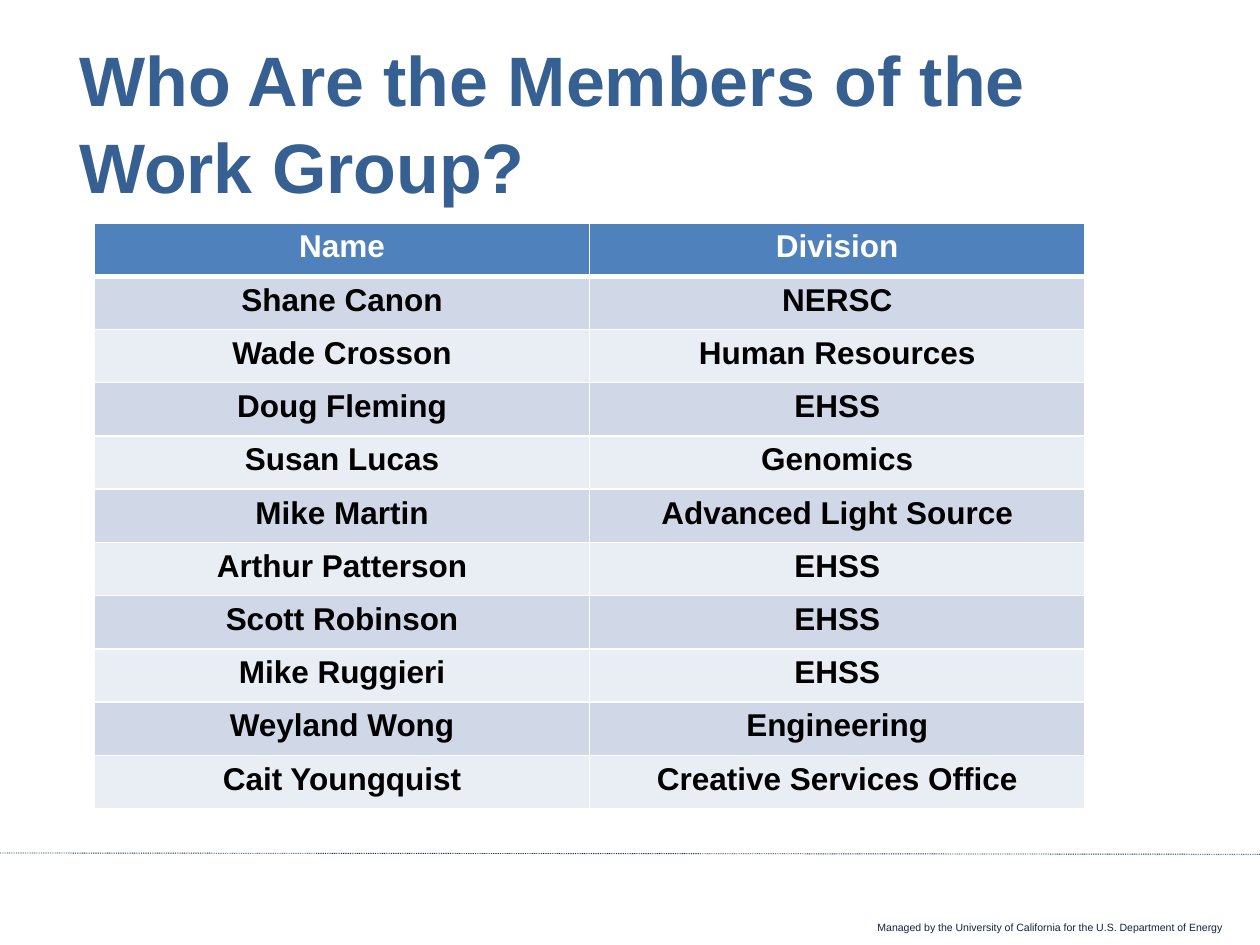
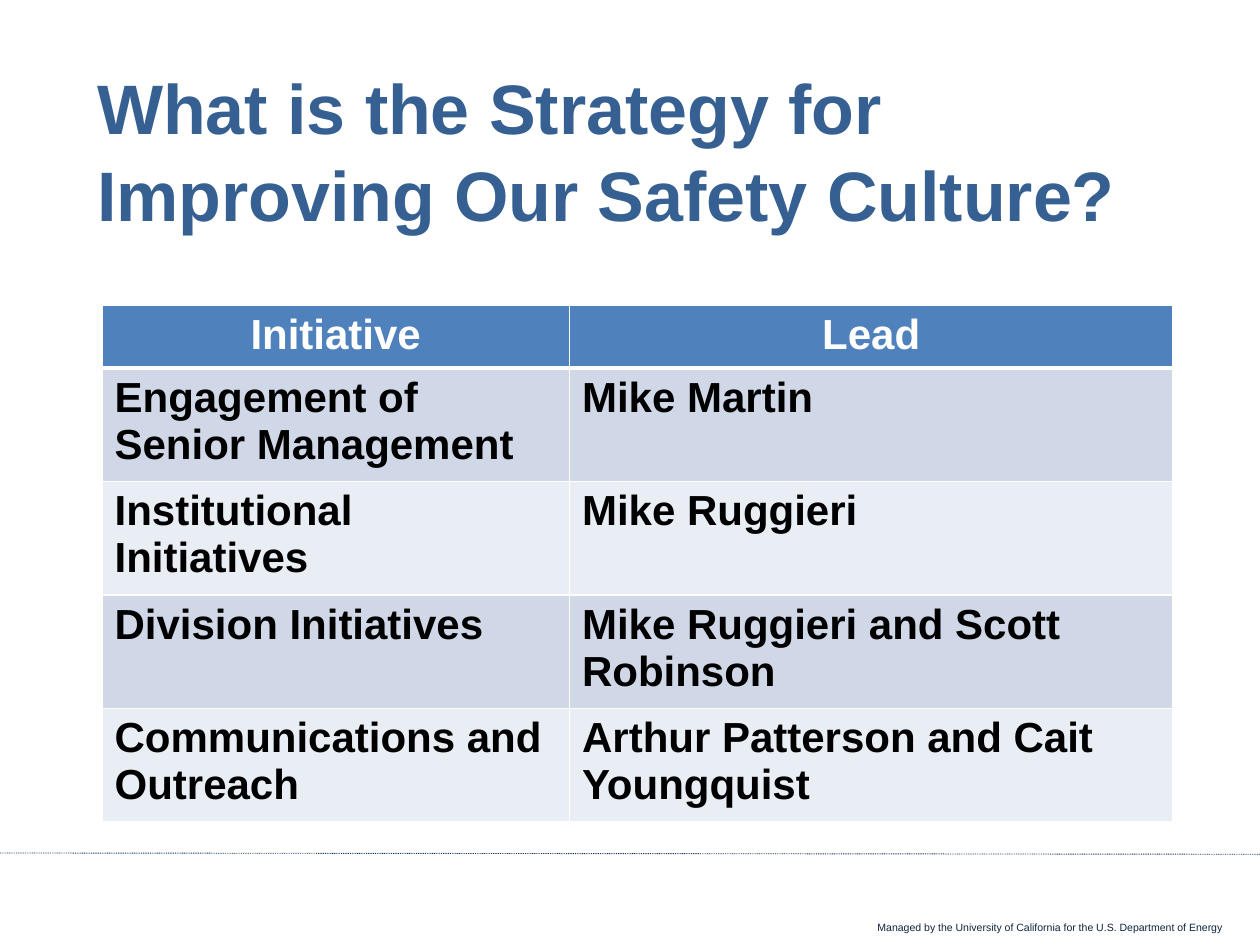
from lxml.etree import SubElement
from pptx import Presentation
from pptx.dml.color import RGBColor
from pptx.enum.dml import MSO_LINE
from pptx.enum.shapes import MSO_CONNECTOR
from pptx.enum.text import MSO_ANCHOR, MSO_AUTO_SIZE, PP_ALIGN
from pptx.oxml import parse_xml
from pptx.oxml.ns import nsdecls, qn
from pptx.util import Inches, Pt

COLORS = {
    "title": "376092",
    "rule": "17375E",
    "footer": "10253F",
    "header": "4F81BD",
    "odd_row": "D0D8E8",
    "even_row": "E9EDF4",
    "white": "FFFFFF",
    "black": "000000",
}
FONT = "Arial"
FOOTER = "Managed by the University of California for the U.S. Department of Energy"
MEMBERS = [
    ("Name", "Division"),
    ("Shane Canon", "NERSC"),
    ("Wade Crosson", "Human Resources"),
    ("Doug Fleming", "EHSS"),
    ("Susan Lucas", "Genomics"),
    ("Mike Martin", "Advanced Light Source"),
    ("Arthur Patterson", "EHSS"),
    ("Scott Robinson", "EHSS"),
    ("Mike Ruggieri", "EHSS"),
    ("Weyland Wong", "Engineering"),
    ("Cait Youngquist", "Creative Services Office"),
]
INITIATIVES = [
    ("Initiative", "Lead"),
    ("Engagement of Senior Management", "Mike Martin"),
    ("Institutional Initiatives", "Mike Ruggieri"),
    ("Division Initiatives", "Mike Ruggieri and Scott Robinson"),
    ("Communications and Outreach", "Arthur Patterson and Cait Youngquist"),
]


def rgb(name):
    """Return the named colour."""
    return RGBColor.from_string(COLORS[name])


def write(paragraph, text, size, color, bold=False, align=PP_ALIGN.LEFT):
    """Add one formatted run to a paragraph."""
    paragraph.alignment = align
    run = paragraph.add_run()
    run.text = text
    font = run.font
    font.name, font.size, font.bold = FONT, Pt(size), bold
    font.color.rgb = rgb(color)


def add_footer(slide):
    """Draw the dotted rule and the footer line."""
    rule = slide.shapes.add_connector(
        MSO_CONNECTOR.STRAIGHT, 0, Inches(6.77), Inches(10), Inches(6.78))
    rule.line.color.rgb = rgb("rule")
    rule.line.width = Pt(0.5)
    rule.line.dash_style = MSO_LINE.ROUND_DOT
    SubElement(rule._element.spPr, qn("a:effectLst"))
    credit = slide.shapes.add_textbox(
        Inches(5.64), Inches(7.26), Inches(4.16), Inches(0.2)).text_frame
    credit.word_wrap = True
    write(credit.paragraphs[0], FOOTER, 6, "footer", align=PP_ALIGN.RIGHT)


def add_title(slide, text, left, top):
    """Place and fill the title placeholder."""
    title = slide.shapes.title
    title.left, title.top = Inches(left), Inches(top)
    title.width, title.height = Inches(8.5), Inches(1.61)
    frame = title.text_frame
    frame.word_wrap = True
    frame.auto_size = MSO_AUTO_SIZE.NONE
    frame.vertical_anchor = MSO_ANCHOR.MIDDLE
    frame.paragraphs[0].line_spacing = 1.04
    write(frame.paragraphs[0], text, 40, "title", bold=True)


def set_borders(cell, top, bottom):
    """Give a cell white borders, with its own top and bottom widths."""
    properties = cell._tc.get_or_add_tcPr()
    widths = {"lnL": 1, "lnR": 1, "lnT": top, "lnB": bottom}
    for position, (side, width) in enumerate(widths.items()):
        properties.insert(position, parse_xml(
            f'<a:{side} {nsdecls("a")} w="{Pt(width)}"><a:solidFill>'
            f'<a:srgbClr val="{COLORS["white"]}"/></a:solidFill></a:{side}>'))


def add_banded_table(slide, rows, left, top, widths, heights, size, body_align):
    """Build a table with a coloured header and alternating rows."""
    table = slide.shapes.add_table(
        len(rows), len(widths), Inches(left), Inches(top),
        Inches(sum(widths)), Inches(sum(heights))).table
    for column, width in zip(table.columns, widths):
        column.width = Inches(width)
    for index, (row, height, texts) in enumerate(zip(table.rows, heights, rows)):
        row.height = Inches(height)
        is_header = index == 0
        band = "header" if is_header else "odd_row" if index % 2 else "even_row"
        for cell, text in zip(row.cells, texts):
            cell.fill.solid()
            cell.fill.fore_color.rgb = rgb(band)
            set_borders(cell, 3 if index == 1 else 1, 3 if is_header else 1)
            write(cell.text_frame.paragraphs[0], text, size,
                  "white" if is_header else "black", bold=True,
                  align=PP_ALIGN.CENTER if is_header else body_align)


def add_table_slide(deck, title, title_at, **table):
    """Add a slide with a title, a table and the shared footer."""
    slide = deck.slides.add_slide(deck.slide_layouts[5])
    add_footer(slide)
    add_title(slide, title, *title_at)
    add_banded_table(slide, **table)


def main():
    """Build and save the deck."""
    deck = Presentation()
    deck.slide_width, deck.slide_height = Inches(10), Inches(7.5)
    add_table_slide(
        deck, "Who Are the Members of the Work Group?", (0.53, 0.15),
        rows=MEMBERS, left=0.75, top=1.77, widths=[3.93] * 2,
        heights=[4.65 / len(MEMBERS)] * len(MEMBERS),
        size=18, body_align=PP_ALIGN.CENTER)
    add_table_slide(
        deck, "What is the Strategy for Improving Our Safety Culture?", (0.67, 0.37),
        rows=INITIATIVES, left=0.81, top=2.42, widths=[3.71, 4.79],
        heights=[0.5] + [0.86] * (len(INITIATIVES) - 1),
        size=24, body_align=PP_ALIGN.LEFT)
    deck.save("out.pptx")


if __name__ == "__main__":
    main()
